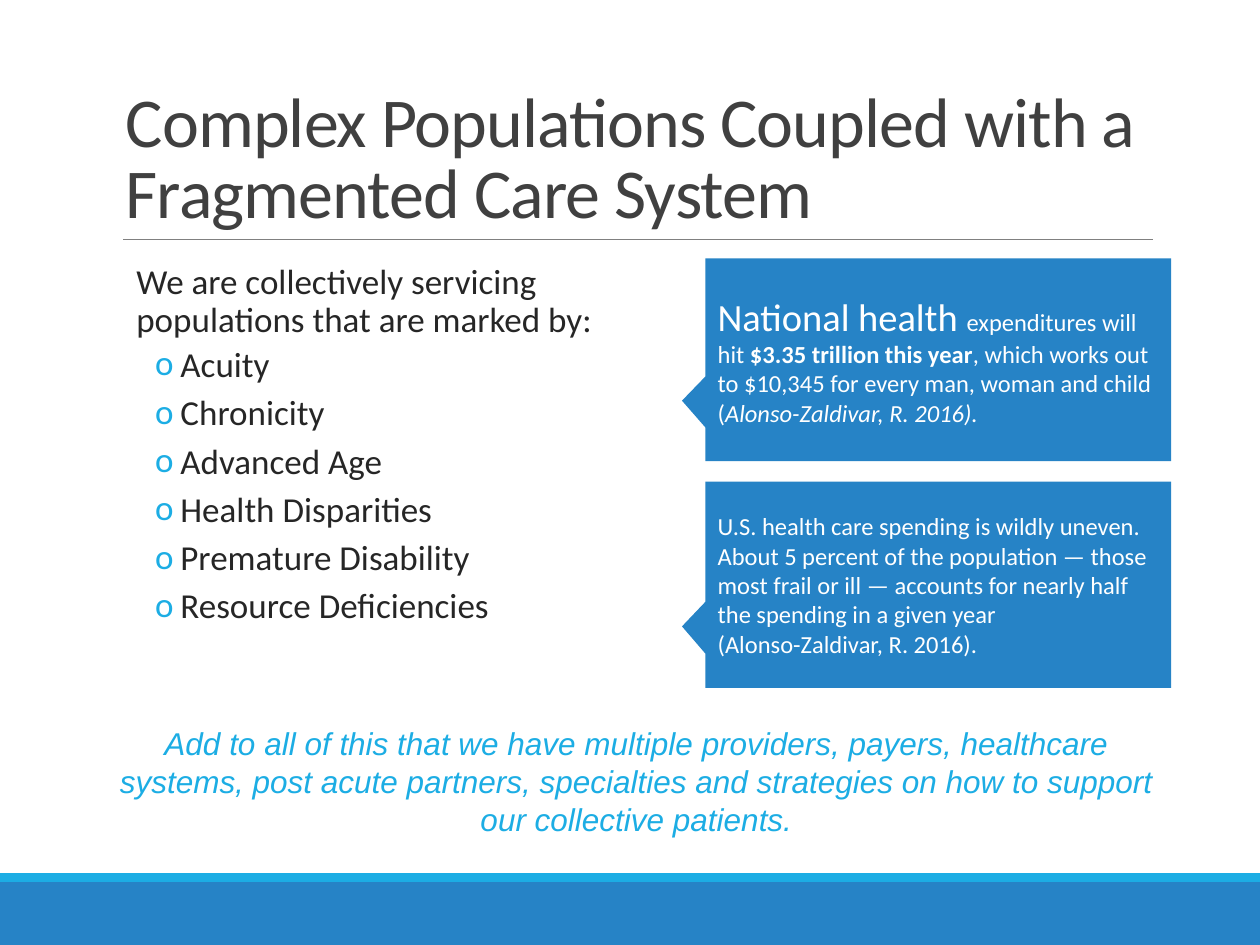
from dataclasses import dataclass, field

from lxml.etree import SubElement
from pptx import Presentation
from pptx.dml.color import RGBColor
from pptx.enum.shapes import MSO_CONNECTOR as CONN, MSO_SHAPE as SHAPE
from pptx.enum.text import MSO_ANCHOR as ANCHOR, MSO_AUTO_SIZE as FIT, PP_ALIGN as ALIGN
from pptx.oxml.ns import qn
from pptx.util import Pt

COLORS = {
    "blue": "2683C6",
    "cyan": "1CADE4",
    "rule": "808080",
    "title": "404040",
    "body": "262626",
    "white": "FFFFFF",
}
BREAK = "\n"


@dataclass
class Run:
    """A piece of text with its font values."""
    text: str
    size: float
    color: str
    fmt: dict = field(default_factory=dict)
    spacing: float = 0


@dataclass
class Para:
    """A paragraph with its format values, indents and bullet."""
    runs: list[Run]
    fmt: dict = field(default_factory=dict)
    margin: float = 0
    indent: float = 0
    bullet: str = ""


@dataclass
class Box:
    """A rectangle in points."""
    x: float
    y: float
    w: float
    h: float

    def emu(self) -> tuple:
        """Return the position and size as lengths."""
        return Pt(self.x), Pt(self.y), Pt(self.w), Pt(self.h)


def rgb(name: str) -> RGBColor:
    """Look up a named colour."""
    return RGBColor.from_string(COLORS[name])


def apply(target, fmt: dict) -> None:
    """Set every format value on the target."""
    for key, value in fmt.items():
        setattr(target, key, value)


def add_run(p, run: Run) -> None:
    """Add one run, or a line break, to a paragraph."""
    if run.text == BREAK:
        p.add_line_break()
        return
    r = p.add_run()
    r.text = run.text
    apply(r.font, {"name": "Calibri", "size": Pt(run.size), **run.fmt})
    r.font.color.rgb = rgb(run.color)
    if run.spacing:
        r._r.get_or_add_rPr().set("spc", str(round(run.spacing * 100)))


def add_bullet(p, para: Para) -> None:
    """Set the indents and the bullet of a paragraph."""
    ppr = p._p.get_or_add_pPr()
    ppr.set("marL", str(Pt(para.margin)))
    ppr.set("indent", str(Pt(para.indent)))
    if para.bullet:
        clr = SubElement(ppr, qn("a:buClr"))
        SubElement(clr, qn("a:srgbClr"), val=COLORS["cyan"])
        SubElement(ppr, qn("a:buFont"), typeface="Calibri")
        SubElement(ppr, qn("a:buChar"), char=para.bullet)


def write(sp, paras: list[Para], frame: dict) -> None:
    """Fill the text frame of a shape."""
    tf = sp.text_frame
    apply(tf, {"word_wrap": True, **frame})
    for i, para in enumerate(paras):
        p = tf.add_paragraph() if i else tf.paragraphs[0]
        apply(p, {"alignment": ALIGN.LEFT, **para.fmt})
        add_bullet(p, para)
        for run in para.runs:
            add_run(p, run)


def add_text(s, box: Box, paras: list[Para], frame: dict) -> None:
    """Add a text box."""
    write(s.shapes.add_textbox(*box.emu()), paras, frame)


def add_block(s, box: Box, color: str, kind=SHAPE.RECTANGLE):
    """Add a filled shape without outline or shadow."""
    sp = s.shapes.add_shape(kind, *box.emu())
    sp.shadow.inherit = False
    sp.fill.solid()
    sp.fill.fore_color.rgb = rgb(color)
    sp.line.fill.background()
    return sp


def add_callout(s, box: Box, runs: list[Run]) -> None:
    """Add a callout that points to the left."""
    sp = add_block(s, box, "blue", SHAPE.RECTANGULAR_CALLOUT)
    sp.adjustments[0], sp.adjustments[1] = -0.55, 0.202
    write(sp, [Para(runs)], {"vertical_anchor": ANCHOR.MIDDLE})


def add_rule(s, x1: float, x2: float, y: float) -> None:
    """Add a thin horizontal line."""
    sp = s.shapes.add_connector(CONN.STRAIGHT, Pt(x1), Pt(y), Pt(x2), Pt(y))
    sp.line.color.rgb = rgb("rule")
    sp.line.width = Pt(0.5)
    SubElement(sp._element.spPr, qn("a:effectLst"))


def main() -> None:
    """Build the slide and save it."""
    prs = Presentation()
    prs.slide_width, prs.slide_height = Pt(720), Pt(540)
    s = prs.slides.add_slide(prs.slide_layouts[6])

    add_block(s, Box(0, 504, 720, 36), "blue")
    add_block(s, Box(0, 499, 720, 5), "cyan")
    add_rule(s, 70.5, 659, 136.8)

    intro = "We are collectively servicing populations that are marked by:"
    marks = ["Acuity", "Chronicity", "Advanced Age", "Health Disparities",
             "Premature Disability", "Resource Deficiencies"]
    intro_fmt = {"line_spacing": 0.9, "space_before": Pt(12), "space_after": Pt(2)}
    mark_fmt = {"level": 1, "line_spacing": 0.9, "space_before": Pt(2), "space_after": Pt(4)}
    body = [Para([Run(intro, 20, "body")], intro_fmt, 5)]
    body += [Para([Run(m, 20, "body")], mark_fmt, 30.2, -14.4, "o") for m in marks]
    add_text(s, Box(72.9, 147.6, 278, 334.8), body, {"margin_left": 0, "margin_right": 0})

    title = Run("Complex Populations Coupled with a Fragmented Care System", 40, "title", spacing=-0.5)
    add_text(s, Box(64.8, 22.3, 604, 114.5), [Para([title], {"line_spacing": 0.85})],
             {"vertical_anchor": ANCHOR.BOTTOM})

    add_callout(s, Box(403, 275.2, 266.2, 117.9), [
        Run("U.S. health care spending is wildly uneven. About 5 percent of the population — those "
            "most frail or ill — accounts for nearly half the spending in a given year", 14, "white"),
        Run(BREAK, 14, "white"),
        Run("(Alonso-Zaldivar, R. 2016).", 14, "white"),
    ])
    add_callout(s, Box(403, 147.6, 266.2, 115.9), [
        Run("National health ", 22, "white"),
        Run("expenditures will hit ", 14, "white"),
        Run("$3.35 trillion this year", 14, "white", {"bold": True}),
        Run(", which works out to $10,345 for every man, woman and child", 14, "white"),
        Run(BREAK, 14, "white"),
        Run("(", 14, "white"),
        Run("Alonso-Zaldivar, R. 2016).", 14, "white", {"italic": True}),
    ])

    closing = Run("Add to all of this that we have multiple providers, payers, healthcare systems, "
                  "post acute partners, specialties and strategies on how to support our collective "
                  "patients.", 18, "cyan", {"name": "Arial", "italic": True})
    add_text(s, Box(58.3, 410.4, 610.6, 72.7), [Para([closing], {"alignment": ALIGN.CENTER})],
             {"auto_size": FIT.SHAPE_TO_FIT_TEXT})

    prs.save("out.pptx")


if __name__ == "__main__":
    main()
